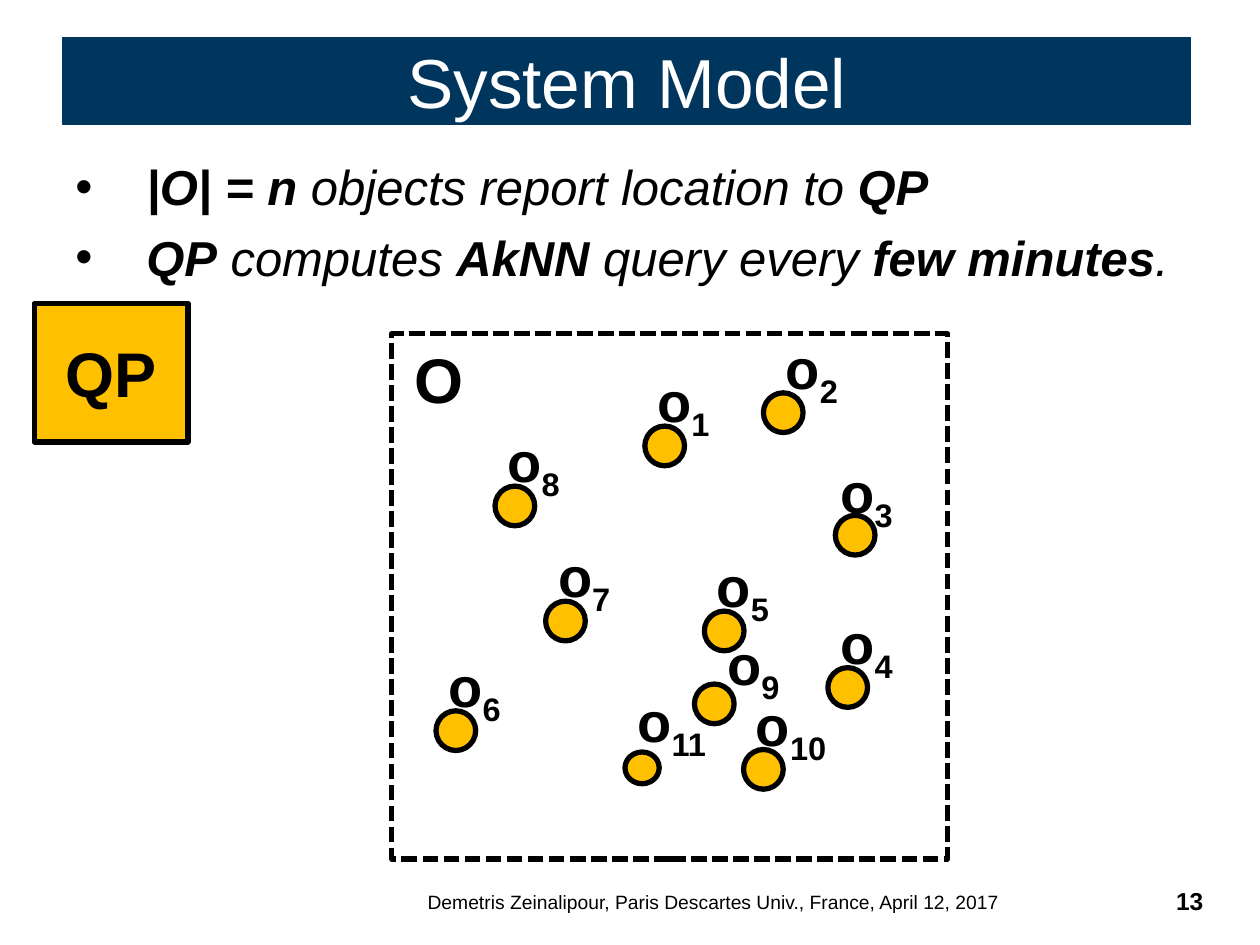
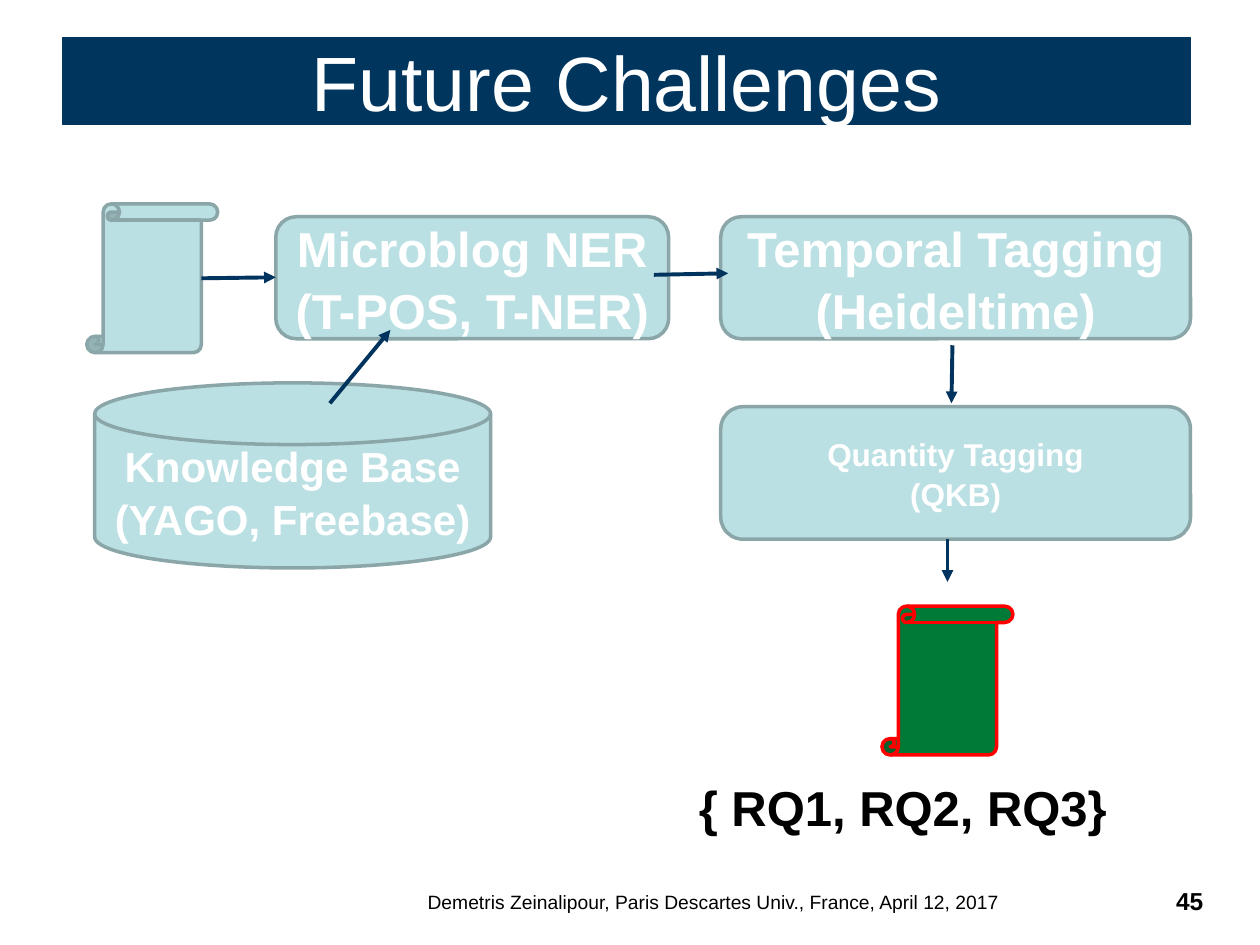
from lxml import etree
from pptx import Presentation
from pptx.dml.color import RGBColor
from pptx.enum.dml import MSO_LINE
from pptx.enum.shapes import MSO_CONNECTOR, MSO_SHAPE
from pptx.enum.text import MSO_ANCHOR, PP_ALIGN
from pptx.oxml.ns import qn
from pptx.util import Cm, Pt

RECT, ROUND = MSO_SHAPE.RECTANGLE, MSO_SHAPE.ROUNDED_RECTANGLE
OVAL, SCROLL = MSO_SHAPE.OVAL, MSO_SHAPE.VERTICAL_SCROLL
DISK = MSO_SHAPE.FLOWCHART_MAGNETIC_DISK
LINE, DASH = MSO_CONNECTOR.STRAIGHT, MSO_LINE.SQUARE_DOT
LEFT, MID, RIGHT = PP_ALIGN.LEFT, PP_ALIGN.CENTER, PP_ALIGN.RIGHT
TOP, CENTRE = MSO_ANCHOR.TOP, MSO_ANCHOR.MIDDLE

NAVY, ARROW, GOLD = "00355E", "00335D", "FFC000"
PALE, EDGE, GREEN, RED = "BBE0E3", "8AA6A8", "007A37", "FF0000"
BLACK, WHITE = "000000", "FFFFFF"

TITLE = (1.27, 0.76, 22.73, 1.75)
FOOTER = (7.49, 17.83, 13.79, 0.74)
NUMBER = (18.26, 17.73, 6.25, 0.91)
CREDIT = "Demetris Zeinalipour, Paris Descartes Univ., France, April 12, 2017"

B, N = {"bold": True}, {"bold": False}
POINTS = [
    [("|O| = n ", B), ("objects report location to ", N), ("QP", B)],
    [("QP", B), (" computes ", N), ("AkNN", B), (" query every ", N),
     ("few minutes", B), (".", N)],
]

# Place of each object's dot in the dashed box, in order of its number
DOTS = [(5.1, 1.86), (7.49, 1.19), (8.94, 3.66), (8.79, 6.73), (6.3, 5.59),
        (0.89, 7.6), (3.1, 5.39), (2.08, 3.07), (6.1, 7.06), (7.09, 8.38),
        (4.7, 8.43)]
DOT, SMALL = (0.8, 0.8), (0.69, 0.64)
ABOVE = (0, -1.32)
SHIFTS = {2: (0.2, -1.32), 3: (-0.15, -1.3), 9: (0.41, -1.22), 11: (0, -1.45)}

# Kind, place in the flow, lines of text, text size
STEPS = [
    (ROUND, (12.78, 0.26, 9.47, 2.46), ["Temporal Tagging", "(Heideltime)"], 28),
    (DISK, (0.16, 3.61, 7.98, 3.73), ["Knowledge Base", "(YAGO, Freebase)"], 24),
    (ROUND, (3.81, 0.26, 7.92, 2.46), ["Microblog NER", "(T-POS, T-NER)"], 28),
    (ROUND, (12.78, 4.09, 9.47, 2.67), ["Quantity Tagging", "(QKB)"], 18),
]
ARROWS = [
    (2.31, 1.5, 3.81, 1.48), (11.43, 1.43, 12.93, 1.4),
    (4.9, 4.02, 6.12, 2.54), (17.35, 6.76, 17.35, 7.62),
    (17.45, 2.85, 17.43, 4.02),
]


def rgb(code):
    return RGBColor.from_string(code)


def cms(box):
    return [Cm(n) for n in box]


def shift(box, x, y, w, h):
    """Give the box at x, y from the corner of another box."""
    return (box[0] + x, box[1] + y, w, h)


def style(font, size, color=BLACK, **more):
    form = {"name": "Arial", "size": Pt(size), **more}
    for key, val in form.items():
        setattr(font, key, val)
    font.color.rgb = rgb(color)


def write(shape, lines, size, align=LEFT, anchor=TOP, wrap=True, space=None,
          **form):
    """Fill a shape with lines, each a string or a list of (text, format)."""
    frame = shape.text_frame
    frame.word_wrap, frame.vertical_anchor = wrap, anchor
    for i, line in enumerate(lines):
        para = frame.paragraphs[0] if i == 0 else frame.add_paragraph()
        para.alignment, para.line_spacing = align, space
        for text, more in [(line, {})] if isinstance(line, str) else line:
            run = para.add_run()
            run.text = text
            style(run.font, size, **{**form, **more})
    return frame


def label(slide, box, lines, size, **form):
    return write(slide.shapes.add_textbox(*cms(box)), lines, size, **form)


def draw(slide, kind, box, fill, edge=BLACK, width=3):
    shape = slide.shapes.add_shape(kind, *cms(box))
    shape.shadow.inherit = False
    if fill:
        shape.fill.solid()
        shape.fill.fore_color.rgb = rgb(fill)
    else:
        shape.fill.background()
    shape.line.color.rgb = rgb(edge)
    shape.line.width = Pt(width)
    return shape


def arrow(slide, box, x1, y1, x2, y2):
    left, top = box[:2]
    ends = cms((left + x1, top + y1, left + x2, top + y2))
    link = slide.shapes.add_connector(LINE, *ends)
    link.line.color.rgb = rgb(ARROW)
    link.line.width = Pt(2.25)
    etree.SubElement(link.line._get_or_add_ln(), qn("a:tailEnd"), type="triangle")
    etree.SubElement(link._element.spPr, qn("a:effectLst"))


def page(deck, title, size, number):
    """Add a slide with its title band, footer and number."""
    slide = deck.slides.add_slide(deck.slide_layouts[6])
    band = draw(slide, RECT, TITLE, NAVY, NAVY, 0.75)
    write(band, [title], size, align=MID, anchor=CENTRE, color=WHITE)
    label(slide, FOOTER, [CREDIT], 11, align=MID)
    label(slide, NUMBER, [str(number)], 14, align=RIGHT, bold=True)
    return slide


def bullets(slide, box):
    frame = label(slide, box, POINTS, 28, italic=True)
    for i, para in enumerate(frame.paragraphs):
        if i:
            para.space_before = Pt(6.5)
        props = para._p.get_or_add_pPr()
        props.set("marL", str(Cm(1.43)))
        props.set("indent", str(Cm(-1.43)))
        etree.SubElement(props, qn("a:buFont"), typeface="Arial")
        etree.SubElement(props, qn("a:buChar"), char="•")


def dot(slide, box, num, x, y):
    """Draw one object and its label with a lowered number."""
    size = SMALL if num == 11 else DOT
    draw(slide, OVAL, shift(box, x, y, *size), GOLD)
    dx, dy = SHIFTS.get(num, ABOVE)
    place = shift(box, x + dx, y + dy, 2.59, 1.63)
    frame = label(slide, place, [[("o", {}), (str(num), {})]], 32, bold=True)
    low = frame.paragraphs[0].runs[1]
    low._r.get_or_add_rPr().set("baseline", "-25000")


def field(slide, box):
    """Draw the dashed set O with all its objects."""
    for num, (x, y) in enumerate(DOTS, 1):
        dot(slide, box, num, x, y)
    draw(slide, RECT, box, None).line.dash_style = DASH
    label(slide, shift(box, 0.2, 0, 2.01, 1.8), ["O"], 36, bold=True)


def flow(slide, box):
    for kind, place, lines, size in STEPS:
        step = draw(slide, kind, shift(box, *place), PALE, EDGE, 2)
        write(step, lines, size, align=MID, anchor=CENTRE, space=1.05,
              color=WHITE, bold=True)
    for x, y, fill, edge in [(0, 0, PALE, EDGE), (16.03, 8.11, GREEN, RED)]:
        draw(slide, SCROLL, shift(box, x, y, 2.64, 3), fill, edge, 2)
    for ends in ARROWS:
        arrow(slide, box, *ends)
    label(slide, shift(box, 12.09, 11.43, 10.74, 1.22), ["{ RQ1, RQ2, RQ3}"],
          28, bold=True)


def model(deck):
    slide = page(deck, "System Model", 39.6, 13)
    bullets(slide, (1.27, 3.04, 22.86, 2.79))
    server = draw(slide, RECT, (0.69, 6.12, 3.1, 2.79), GOLD)
    write(server, ["QP"], 36, align=MID, anchor=CENTRE, wrap=False, bold=True)
    field(slide, (7.9, 6.73, 11.2, 10.59))


def future(deck):
    slide = page(deck, "Future Challenges", 44, 45)
    flow(slide, (1.75, 4.11, 22.25, 12.65))


def main():
    deck = Presentation()
    deck.slide_width, deck.slide_height = Cm(25.4), Cm(19.05)
    model(deck)
    future(deck)
    deck.save("out.pptx")


if __name__ == "__main__":
    main()
